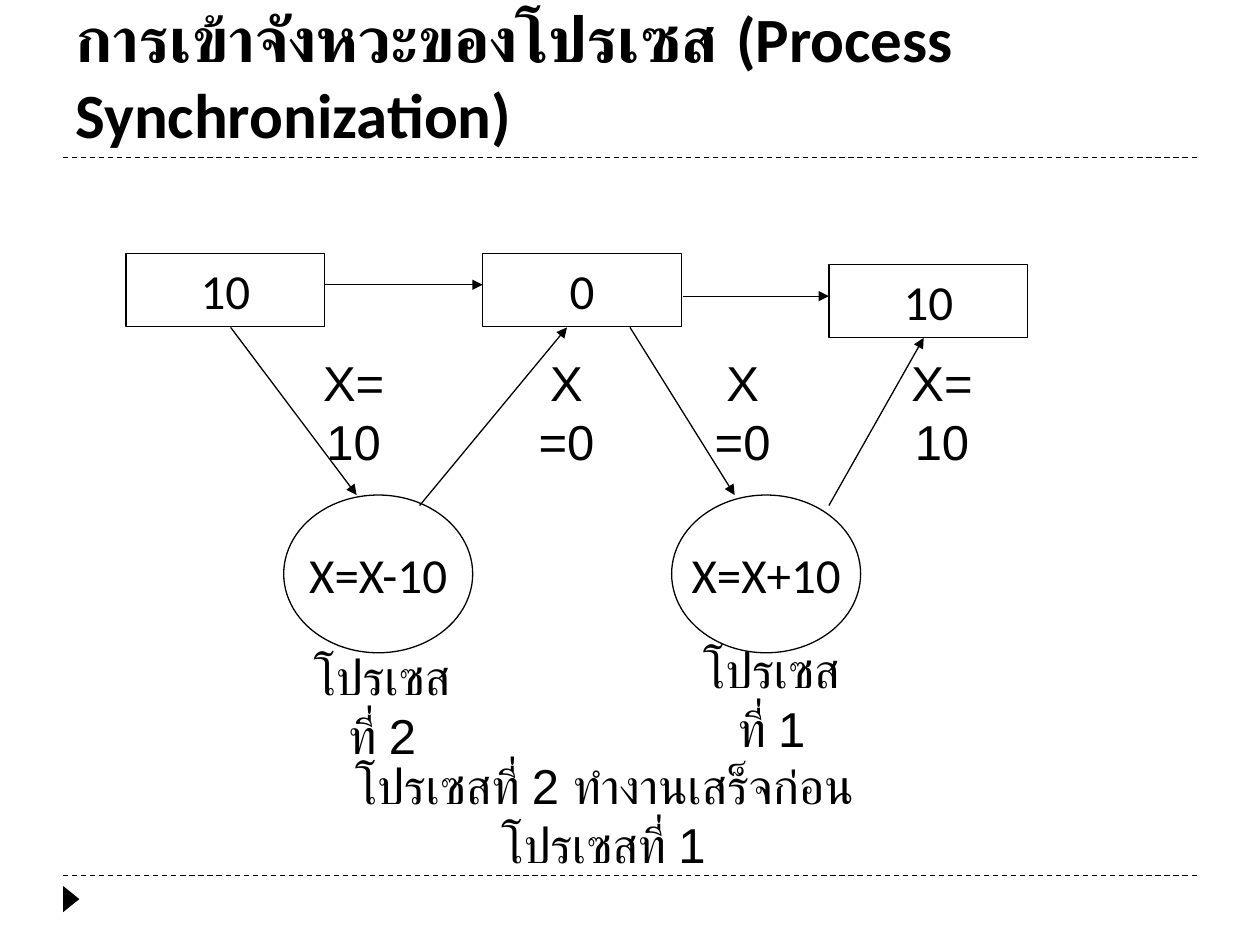
from lxml import etree
from pptx import Presentation
from pptx import util as u
from pptx.dml import color, line as dml_line
from pptx.enum import dml, shapes, text
from pptx.oxml import ns

COLORS = {"ink": "000000"}
INK = color.RGBColor.from_string(COLORS["ink"])

presentation = Presentation()
presentation.slide_width = u.Cm(25.4)
presentation.slide_height = u.Cm(19.05)
slide = presentation.slides.add_slide(presentation.slide_layouts[6])


def write(shape, words, font="Calibri", size=28, bold=False, wrap=True,
          align=text.PP_ALIGN.CENTER, anchor=text.MSO_ANCHOR.MIDDLE):
    frame = shape.text_frame
    frame.word_wrap = wrap
    frame.vertical_anchor = anchor
    paragraph = frame.paragraphs[0]
    paragraph.alignment = align
    run = paragraph.add_run()
    run.text = words
    run.font.name = font
    run.font.size = u.Pt(size)
    run.font.bold = bold
    run.font.color.rgb = INK


def connect(x1, y1, x2, y2, arrow=False):
    connector = slide.shapes.add_connector(
        shapes.MSO_CONNECTOR.STRAIGHT, u.Cm(x1), u.Cm(y1), u.Cm(x2), u.Cm(y2))
    connector.line.color.rgb = INK
    connector.line.width = u.Pt(0.75)
    if arrow:
        line_xml = connector.line._get_or_add_ln()
        etree.SubElement(line_xml, ns.qn("a:tailEnd"), type="triangle")
    else:
        connector.line.dash_style = dml.MSO_LINE.DASH
    etree.SubElement(connector._element.spPr, ns.qn("a:effectLst"))


# Dashed rules and corner marker
for y in (17.65, 3.18):
    connect(1.27, y, 24.13, y)
marker = slide.shapes.add_shape(
    shapes.MSO_SHAPE.ISOSCELES_TRIANGLE, u.Cm(1.17), u.Cm(17.96), u.Cm(0.53), u.Cm(0.33))
marker.rotation = 90
marker.shadow.inherit = False
marker.fill.solid()
marker.fill.fore_color.rgb = INK
marker.line.fill.background()

# Title
title = slide.shapes.add_textbox(u.Cm(1.27), u.Cm(0.43), u.Cm(22.86), u.Cm(2.74))
write(title, "การเข้าจังหวะของโปรเซส (Process Synchronization)", size=36, bold=True,
      align=text.PP_ALIGN.LEFT, anchor=text.MSO_ANCHOR.BOTTOM)

# Value boxes and process circles
BOX = (shapes.MSO_SHAPE.RECTANGLE, 4.01, 1.47)
CIRCLE = (shapes.MSO_SHAPE.OVAL, 3.81, 3.18)
for (kind, width, height), left, top, words in (
    (BOX, 2.54, 5.11, "10"),
    (BOX, 9.73, 5.11, "0"),
    (BOX, 16.71, 5.33, "10"),
    (CIRCLE, 5.72, 9.98, "X=X-10"),
    (CIRCLE, 13.54, 9.98, "X=X+10"),
):
    node = slide.shapes.add_shape(kind, u.Cm(left), u.Cm(top), u.Cm(width), u.Cm(height))
    node.shadow.inherit = False
    node.fill.background()
    node.line.color.rgb = INK
    node.line.width = u.Pt(0.75)
    write(node, words, wrap=False)

# Arrows between values and processes
for ends in (
    (4.65, 6.6, 7.19, 9.98),
    (6.55, 5.74, 9.73, 5.74),
    (8.46, 10.19, 11.43, 6.6),
    (12.7, 6.6, 14.81, 9.98),
    (16.71, 10.19, 18.62, 6.81),
    (13.77, 5.97, 16.71, 5.97),
):
    connect(*ends, arrow=True)

# Process names, caption and transferred values
for left, top, width, words in (
    (5.89, 13.49, 3.63, "โปรเซสที่ 2"),
    (13.74, 13.36, 3.63, "โปรเซสที่ 1"),
    (6.48, 15.7, 11.38, "โปรเซสที่ 2 ทำงานเสร็จก่อนโปรเซสที่ 1"),
    (6.1, 7.57, 2.06, "X=10"),
    (10.57, 7.57, 1.7, "X=0"),
    (14.12, 7.57, 1.7, "X=0"),
    (17.96, 7.57, 2.06, "X=10"),
):
    label = slide.shapes.add_textbox(u.Cm(left), u.Cm(top), u.Cm(width), u.Cm(1.45))
    write(label, words, font="Arial")

presentation.save("out.pptx")
